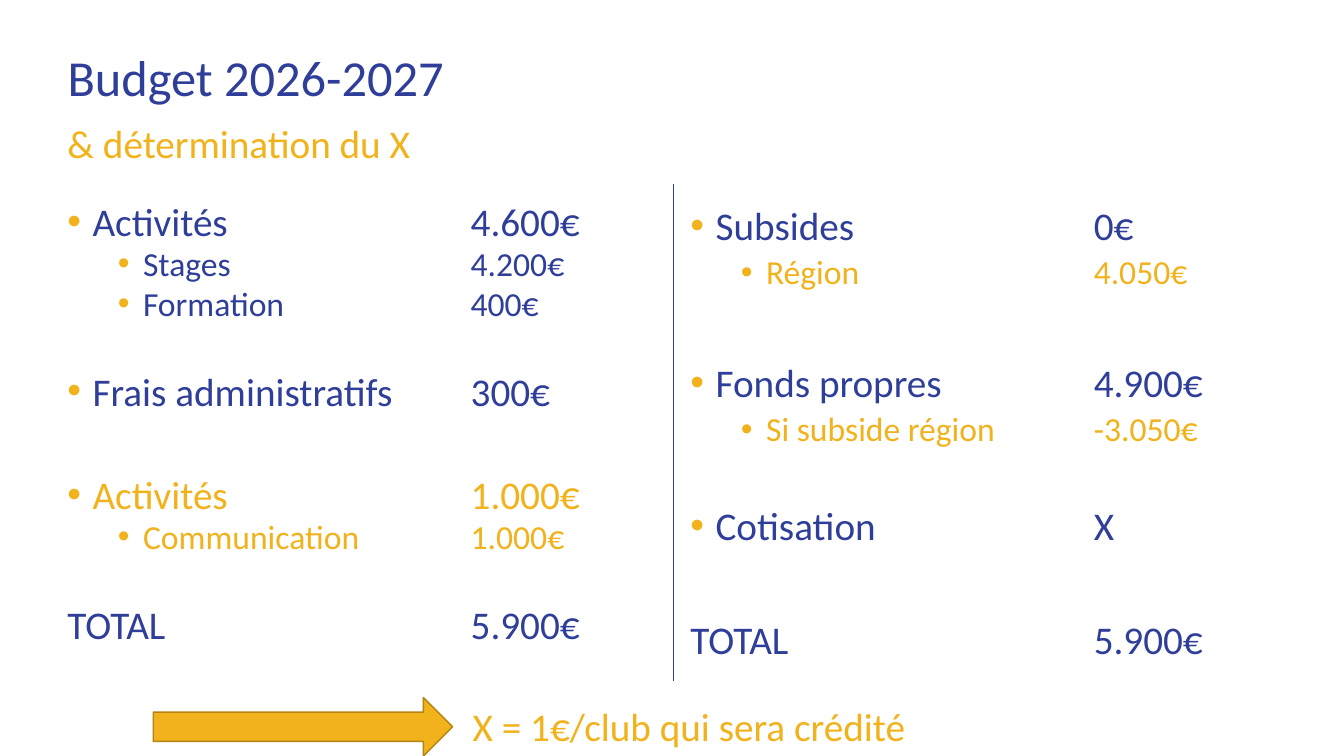
from lxml import etree
from pptx import Presentation, util as u
from pptx.dml.color import RGBColor
from pptx.enum import shapes, text
from pptx.oxml.ns import qn

BLUE, GOLD, BRONZE = "2F3F99", "F2B21B", "B38414"
FONT = "Calibri"
WIDTH, HEIGHT = 13.33, 7.5
MARGIN, MIDDLE, TOP, BOTTOM = 0.57, 6.68, 2, 6.76
AMOUNT_TAB = 4
SIZES = {"main": 28, "sub": 24, "total": 28}
INDENTS = {"main": 0.25, "sub": 0.75, "total": 0}

TITLE = "Budget 2026-2027"
SUBTITLE = "& détermination du X"
CONCLUSION = "X = 1€/club qui sera crédité"

EXPENSES = [
    ("main", "Activités", "4.600€", BLUE, 0),
    ("sub", "Stages", "4.200€", BLUE, 5),
    ("sub", "Formation", "400€", BLUE, 5),
    ("main", "Frais administratifs", "300€", BLUE, 38),
    ("main", "Activités", "1.000€", GOLD, 47),
    ("sub", "Communication", "1.000€", GOLD, 5),
    ("total", "TOTAL", "5.900€", BLUE, 38),
]
INCOME = [
    ("main", "Subsides", "0€", BLUE, 0),
    ("sub", "Région", "4.050€", GOLD, 5),
    ("main", "Fonds propres", "4.900€", BLUE, 51),
    ("sub", "Si subside région", "-3.050€", GOLD, 5),
    ("main", "Cotisation", "X", BLUE, 41),
    ("total", "TOTAL", "5.900€", BLUE, 51),
]
COLUMNS = [
    (MARGIN, 6.01, 0.8, EXPENSES),
    (6.75, 6.03, 0.9, INCOME),
]


def colour(value):
    return RGBColor.from_string(value)


def write(paragraph, words, size=28, hue=BLUE, spacing=0.9, before=0):
    paragraph.text = words
    paragraph.alignment = text.PP_ALIGN.LEFT
    paragraph.line_spacing = spacing
    paragraph.space_before = u.Pt(before)
    font = paragraph.runs[0].font
    font.name, font.size = FONT, u.Pt(size)
    font.color.rgb = colour(hue)


def add_box(left, top, width, height):
    frame = slide.shapes.add_textbox(
        u.Inches(left), u.Inches(top), u.Inches(width), u.Inches(height)
    ).text_frame
    frame.word_wrap = True
    return frame


def set_layout(paragraph, indent):
    properties = paragraph._p.get_or_add_pPr()
    if indent:
        properties.set("marL", str(u.Inches(indent)))
        properties.set("indent", str(-u.Inches(0.25)))
        bullet_colour = etree.SubElement(properties, qn("a:buClr"))
        etree.SubElement(bullet_colour, qn("a:srgbClr"), val=GOLD)
        etree.SubElement(properties, qn("a:buFont"), typeface="Arial")
        etree.SubElement(properties, qn("a:buChar"), char="•")
    tabs = etree.SubElement(properties, qn("a:tabLst"))
    etree.SubElement(tabs, qn("a:tab"), pos=str(u.Inches(AMOUNT_TAB)), algn="l")


def add_budget(left, width, spacing, entries):
    frame = add_box(left, TOP, width, BOTTOM - TOP)
    for index, (level, label, amount, hue, before) in enumerate(entries):
        paragraph = frame.add_paragraph() if index else frame.paragraphs[0]
        set_layout(paragraph, INDENTS[level])
        write(paragraph, f"{label}\t{amount}", size=SIZES[level], hue=hue,
              spacing=spacing, before=before)


deck = Presentation()
deck.slide_width, deck.slide_height = u.Inches(WIDTH), u.Inches(HEIGHT)
slide = deck.slides.add_slide(deck.slide_layouts[5])

title = slide.shapes.title
title.left, title.top = u.Inches(MARGIN), u.Inches(0.4)
title.width, title.height = u.Inches(12.22), u.Inches(0.79)
title.text_frame.vertical_anchor = text.MSO_ANCHOR.MIDDLE
write(title.text_frame.paragraphs[0], TITLE, size=36)

write(add_box(MARGIN, 1.19, 12.22, 0.64).paragraphs[0], SUBTITLE, hue=GOLD)

for column in COLUMNS:
    add_budget(*column)

divider = slide.shapes.add_connector(
    shapes.MSO_CONNECTOR.STRAIGHT,
    u.Inches(MIDDLE), u.Inches(1.83), u.Inches(MIDDLE), u.Inches(BOTTOM))
divider.line.color.rgb = colour(BLUE)
divider.line.width = u.Pt(0.5)
etree.SubElement(divider._element.spPr, qn("a:effectLst"))

arrow = slide.shapes.add_shape(
    shapes.MSO_SHAPE.RIGHT_ARROW,
    u.Inches(1.52), u.Inches(6.92), u.Inches(2.97), u.Inches(0.58))
arrow.shadow.inherit = False
arrow.fill.solid()
arrow.fill.fore_color.rgb = colour(GOLD)
arrow.line.color.rgb = colour(BRONZE)
arrow.line.width = u.Pt(1)

write(add_box(4.59, 6.92, 4.74, 0.57).paragraphs[0], CONCLUSION, hue=GOLD, spacing=1.0)

deck.save("out.pptx")
